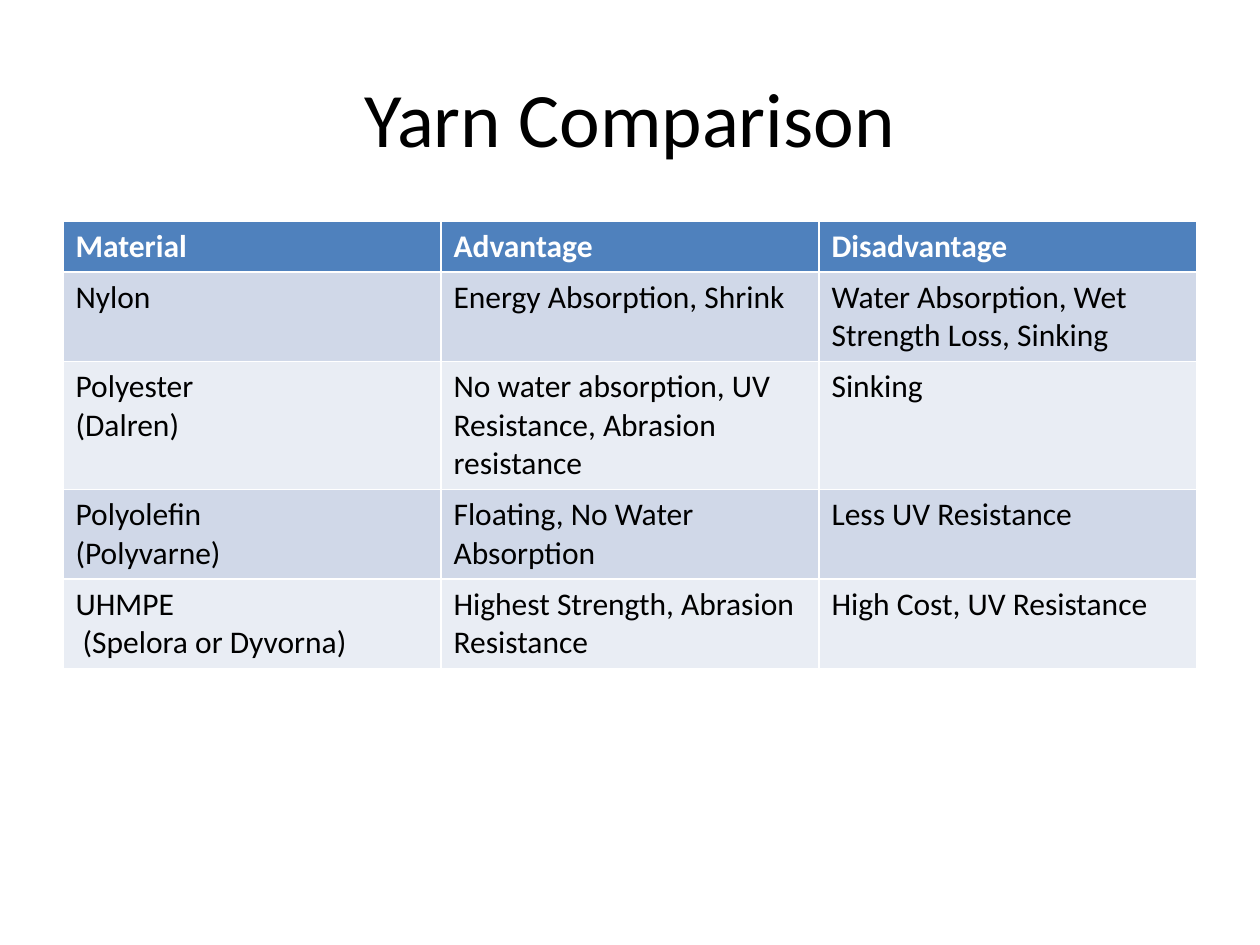
from pptx import Presentation
from pptx.dml.color import RGBColor
from pptx.enum.text import MSO_ANCHOR as Anchor, PP_ALIGN as Align
from pptx.util import Emu, Pt

BLACK = RGBColor(0x00, 0x00, 0x00)
WHITE = RGBColor(0xFF, 0xFF, 0xFF)
HEADER_BLUE = RGBColor(0x4F, 0x81, 0xBD)
BAND_DARK = RGBColor(0xD0, 0xD8, 0xE8)
BAND_LIGHT = RGBColor(0xE9, 0xED, 0xF4)

PX_PER_INCH = 126
FONT = "Calibri"
ROW_HEIGHT = 51
HEADINGS = ("Material", "Advantage", "Disadvantage")
YARNS = (
    ("Nylon", "Energy Absorption, Shrink",
     "Water Absorption, Wet Strength Loss, Sinking"),
    ("Polyester\n(Dalren)",
     "No water absorption, UV Resistance, Abrasion resistance", "Sinking"),
    ("Polyolefin\n(Polyvarne)", "Floating, No Water Absorption",
     "Less UV Resistance"),
    ("UHMPE\n (Spelora or Dyvorna)", "Highest Strength, Abrasion Resistance",
     "High Cost, UV Resistance"),
)


def px(length):
    """Turn whole pixels into EMU."""
    return Emu(round(length * 914400 / PX_PER_INCH))


def write(frame, text, size=18, color=BLACK, bold=False, align=Align.LEFT):
    """Fill a text frame, one paragraph per line, in one format."""
    frame.text = text
    for paragraph in frame.paragraphs:
        paragraph.alignment = align
        for run in paragraph.runs:
            run.font.name = FONT
            run.font.size = Pt(size)
            run.font.bold = bold
            run.font.color.rgb = color


def place_heading(slide, left, top, width, height):
    """Place the slide title in the given box."""
    heading = slide.shapes.title
    heading.left, heading.top = px(left), px(top)
    heading.width, heading.height = px(width), px(height)
    heading.text_frame.vertical_anchor = Anchor.MIDDLE
    write(heading.text_frame, "Yarn Comparison", size=44, align=Align.CENTER)


def place_comparison(slide, left, top, width):
    """Place the yarn table with a header and alternating bands."""
    rows = (HEADINGS, *YARNS)
    comparison = slide.shapes.add_table(
        len(rows), len(HEADINGS), px(left), px(top),
        px(width), px(ROW_HEIGHT * len(rows))).table
    for row, texts in enumerate(rows):
        is_header = row == 0
        band = BAND_DARK if row % 2 else BAND_LIGHT
        for column, text in enumerate(texts):
            cell = comparison.cell(row, column)
            cell.fill.solid()
            cell.fill.fore_color.rgb = HEADER_BLUE if is_header else band
            write(cell.text_frame, text, bold=is_header,
                  color=WHITE if is_header else BLACK)


def main():
    """Build and save the yarn comparison slide."""
    deck = Presentation()
    deck.slide_width, deck.slide_height = px(1260), px(945)
    slide = deck.slides.add_slide(deck.slide_layouts[5])
    place_heading(slide, 63, 38, 1134, 157)
    place_comparison(slide, 63, 221, 1134)
    deck.save("out.pptx")


if __name__ == "__main__":
    main()
